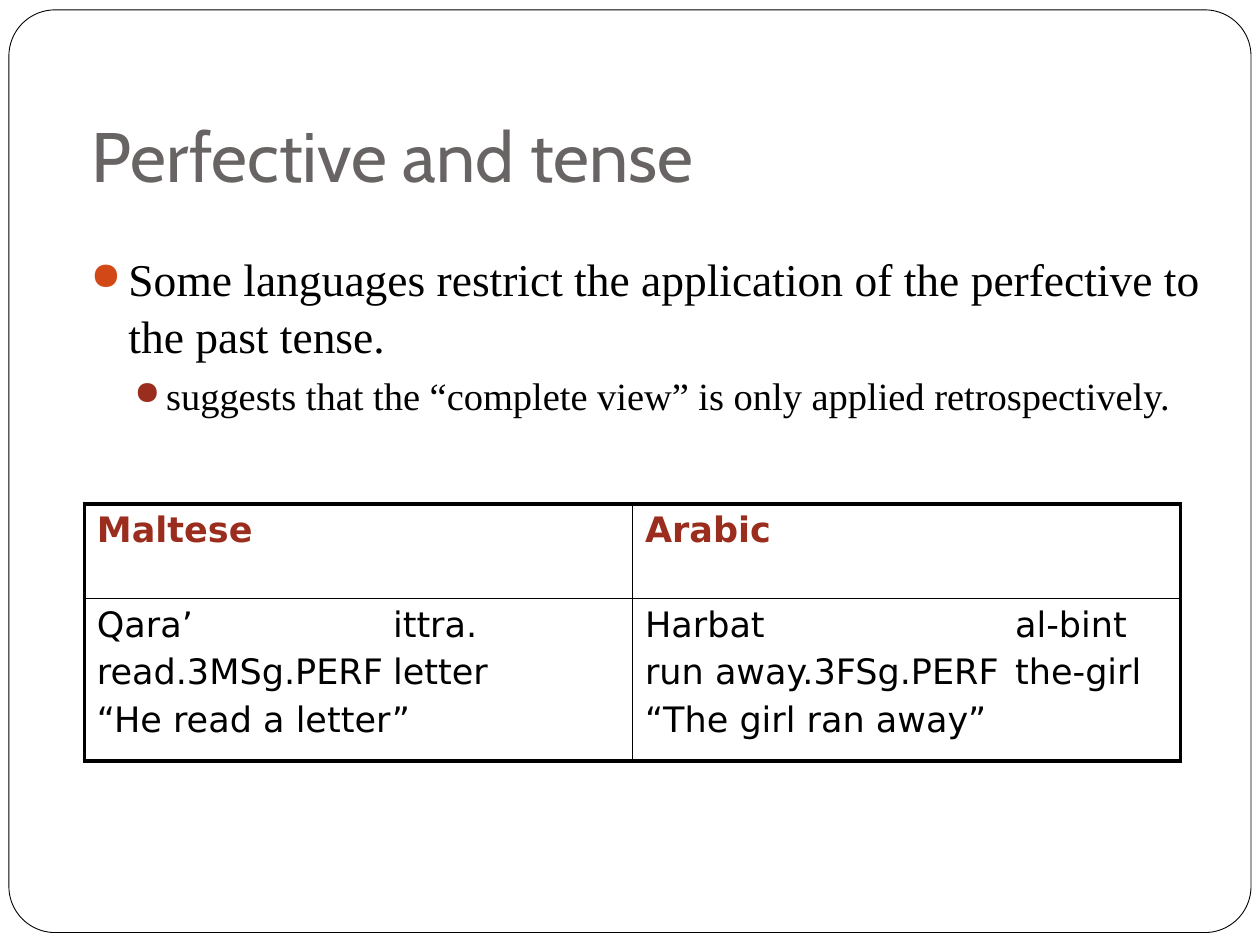
from lxml.etree import SubElement
from pptx import Presentation
from pptx.dml.color import RGBColor
from pptx.enum.shapes import MSO_SHAPE
from pptx.enum.text import MSO_ANCHOR
from pptx.oxml.ns import qn
from pptx.util import Cm, Pt

BLACK = RGBColor(0x00, 0x00, 0x00)
WHITE = RGBColor(0xFF, 0xFF, 0xFF)
GREY = RGBColor(0x69, 0x64, 0x64)
ORANGE = RGBColor(0xD3, 0x48, 0x17)
RED = RGBColor(0x9B, 0x2D, 0x1F)

TITLE = "Perfective and tense"
BULLETS = [
    {"text": "Some languages restrict the application of the perfective to the past tense.",
     "size": 26, "before": 5.8, "margin": 0.76, "hanging": 0.76, "color": ORANGE},
    {"text": "suggests that the “complete view” is only applied retrospectively.",
     "size": 22, "before": 3.7, "margin": 1.52, "hanging": 0.64, "color": RED},
]
EXAMPLES = [
    ["Maltese", "Arabic"],
    ["Qara’\tittra.\nread.3MSg.PERF\tletter\n“He read a letter”",
     "Harbat\tal-bint\nrun away.3FSg.PERF\tthe-girl\n“The girl ran away”"],
]
COLUMN_WIDTH = 11.05
ROW_HEIGHTS = [1.9, 3.28]
TAB_STOPS = [5.97, 7.46]
OUTER_LINE, INNER_LINE = 2.25, 1


def format_runs(paragraph, font_name, size, color, bold=False):
    for run in paragraph.runs:
        run.font.name = font_name
        run.font.size = Pt(size)
        run.font.color.rgb = color
        run.font.bold = bold


def add_text_frame(slide, left, top, width, height):
    text_frame = slide.shapes.add_textbox(Cm(left), Cm(top), Cm(width), Cm(height)).text_frame
    text_frame.word_wrap = True
    return text_frame


def add_bullet(paragraph, margin, hanging, color):
    properties = paragraph._p.get_or_add_pPr()
    properties.set("marL", str(Cm(margin)))
    properties.set("indent", str(-Cm(hanging)))
    bullet_color = SubElement(properties, qn("a:buClr"))
    SubElement(bullet_color, qn("a:srgbClr"), val=str(color))
    SubElement(properties, qn("a:buSzPct"), val="85000")
    SubElement(properties, qn("a:buChar"), char="●")


def add_tab_stop(paragraph, position):
    tab_list = SubElement(paragraph._p.get_or_add_pPr(), qn("a:tabLst"))
    SubElement(tab_list, qn("a:tab"), pos=str(Cm(position)), algn="l")


def set_borders(cell, widths):
    properties = cell._tc.get_or_add_tcPr()
    for side, width in widths.items():
        line = SubElement(properties, qn(f"a:ln{side}"), w=str(Pt(width)))
        fill = SubElement(line, qn("a:solidFill"))
        SubElement(fill, qn("a:srgbClr"), val=str(BLACK))


def add_frame(slide):
    frame = slide.shapes.add_shape(
        MSO_SHAPE.ROUNDED_RECTANGLE, Cm(0.18), Cm(0.2), Cm(25.04), Cm(18.6))
    frame.adjustments[0] = 0.05
    frame.shadow.inherit = False
    frame.fill.solid()
    frame.fill.fore_color.rgb = WHITE
    frame.line.color.rgb = BLACK
    frame.line.width = Pt(0.5)


def add_title(slide):
    text_frame = add_text_frame(slide, 1.6, 0.84, 22.23, 3.38)
    text_frame.vertical_anchor = MSO_ANCHOR.BOTTOM
    text_frame.margin_bottom = Cm(0.25)
    text_frame.text = TITLE
    format_runs(text_frame.paragraphs[0], "Cabin", 40, GREY)


def add_bullets(slide):
    text_frame = add_text_frame(slide, 1.58, 4.88, 22.99, 4.65)
    text_frame.text = "\n".join(bullet["text"] for bullet in BULLETS)
    for paragraph, bullet in zip(text_frame.paragraphs, BULLETS):
        paragraph.space_before = Pt(bullet["before"])
        paragraph.line_spacing = 1.05
        add_bullet(paragraph, bullet["margin"], bullet["hanging"], bullet["color"])
        format_runs(paragraph, "Times New Roman", bullet["size"], BLACK)


def add_examples(slide):
    rows, columns = len(EXAMPLES), len(EXAMPLES[0])
    table = slide.shapes.add_table(
        rows, columns, Cm(1.7), Cm(10.16),
        Cm(COLUMN_WIDTH * columns), Cm(sum(ROW_HEIGHTS))).table
    for column in table.columns:
        column.width = Cm(COLUMN_WIDTH)
    for row_index, texts in enumerate(EXAMPLES):
        table.rows[row_index].height = Cm(ROW_HEIGHTS[row_index])
        is_header = row_index == 0
        for column_index, text in enumerate(texts):
            cell = table.cell(row_index, column_index)
            cell.text_frame.text = text
            for paragraph in cell.text_frame.paragraphs:
                paragraph.space_before = Pt(4)
                add_tab_stop(paragraph, TAB_STOPS[column_index])
                format_runs(paragraph, "DejaVu Sans", 20, RED if is_header else BLACK, is_header)
            on_edge = {"L": column_index == 0, "R": column_index == columns - 1,
                       "T": is_header, "B": row_index == rows - 1}
            set_borders(cell, {side: OUTER_LINE if outer else INNER_LINE
                               for side, outer in on_edge.items()})
            cell.fill.background()


def main():
    presentation = Presentation()
    presentation.slide_width = Cm(25.4)
    presentation.slide_height = Cm(19.05)
    slide = presentation.slides.add_slide(presentation.slide_layouts[6])
    add_frame(slide)
    add_title(slide)
    add_bullets(slide)
    add_examples(slide)
    presentation.save("out.pptx")


if __name__ == "__main__":
    main()
